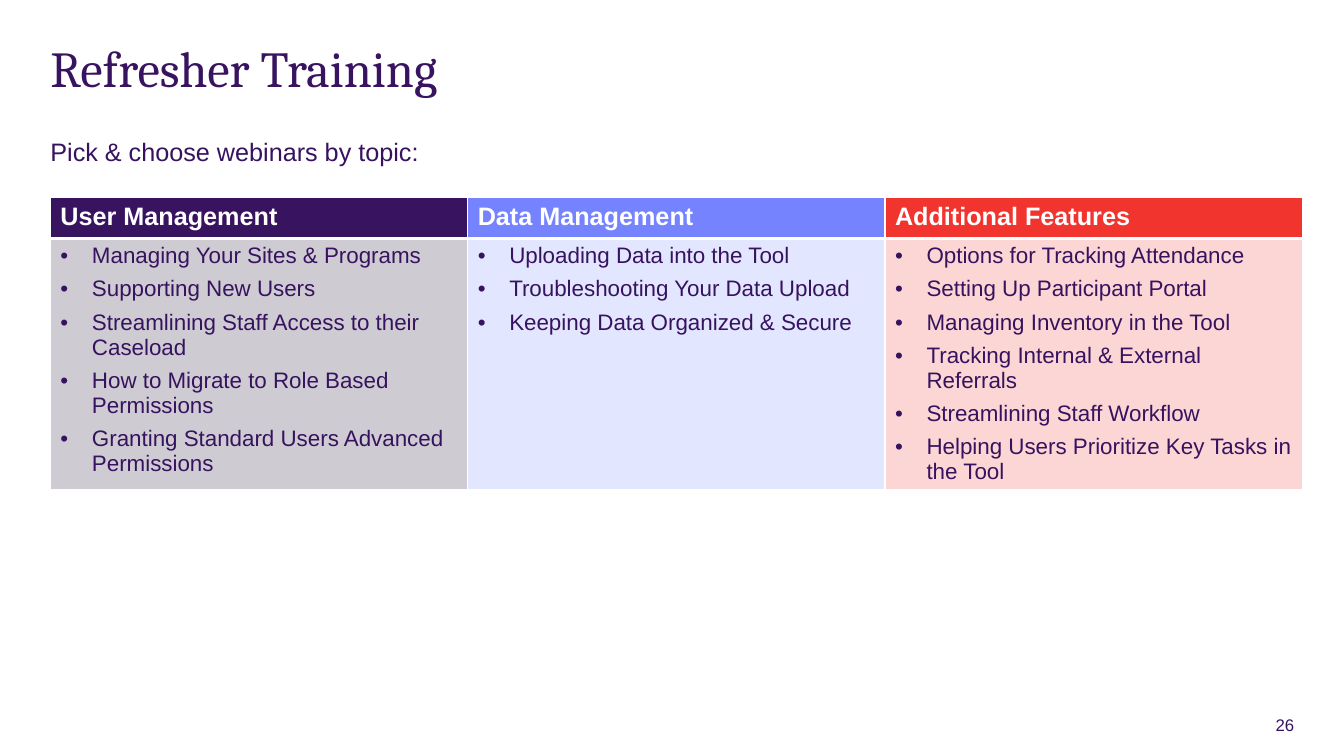
from lxml.etree import SubElement
from pptx import Presentation
from pptx.dml.color import RGBColor
from pptx.enum.text import MSO_ANCHOR as Anchor, MSO_AUTO_SIZE as AutoSize, PP_ALIGN as Align
from pptx.oxml.ns import qn
from pptx.util import Pt

INK = "37135F"
TOPICS = [
    ("User Management", "381360", "CECCD2", [
        "Managing Your Sites & Programs",
        "Supporting New Users",
        "Streamlining Staff Access to their Caseload",
        "How to Migrate to Role Based Permissions",
        "Granting Standard Users Advanced Permissions",
    ]),
    ("Data Management", "7583FF", "E3E6FF", [
        "Uploading Data into the Tool",
        "Troubleshooting Your Data Upload",
        "Keeping Data Organized & Secure",
    ]),
    ("Additional Features", "F2342F", "FCD6D5", [
        "Options for Tracking Attendance",
        "Setting Up Participant Portal",
        "Managing Inventory in the Tool",
        "Tracking Internal & External Referrals",
        "Streamlining Staff Workflow",
        "Helping Users Prioritize Key Tasks in the Tool",
    ]),
]


def rgb(value):
    return RGBColor.from_string(value)


class TrainingSlide:
    heading_font = "Cambria"
    body_font = "Arial"
    bullet_indent = 22.5

    def __init__(self, deck):
        self.slide = deck.slides.add_slide(deck.slide_layouts[5])

    def run(self, paragraph, text, size, color=INK, font=body_font, bold=False):
        run = paragraph.add_run()
        run.text = text
        run.font.size = Pt(size)
        run.font.name = font
        run.font.bold = bold
        run.font.color.rgb = rgb(color)

    def frame(self, shape, wrap=True):
        """Clear the margins of a text shape and align its text to the top."""
        frame = shape.text_frame
        frame.margin_left = frame.margin_right = 0
        frame.margin_top = frame.margin_bottom = 0
        frame.vertical_anchor = Anchor.TOP
        frame.auto_size = AutoSize.NONE
        frame.word_wrap = wrap
        return frame.paragraphs[0]

    def title(self, text, left, top, width, height):
        heading = self.slide.shapes.title
        heading.left, heading.top = Pt(left), Pt(top)
        heading.width, heading.height = Pt(width), Pt(height)
        paragraph = self.frame(heading)
        paragraph.alignment = Align.LEFT
        paragraph.line_spacing = 0.9
        self.run(paragraph, text, 36, "381360", self.heading_font)

    def text(self, text, left, top, width, height, size, align=Align.LEFT, wrap=True):
        box = self.slide.shapes.add_textbox(Pt(left), Pt(top), Pt(width), Pt(height))
        paragraph = self.frame(box, wrap)
        paragraph.alignment = align
        self.run(paragraph, text, size)

    def bullet(self, paragraph, text):
        properties = paragraph._p.get_or_add_pPr()
        properties.set("marL", str(Pt(self.bullet_indent)))
        properties.set("indent", str(-Pt(self.bullet_indent)))
        SubElement(properties, qn("a:buFont"), typeface=self.body_font)
        SubElement(properties, qn("a:buChar"), char="•")
        self.run(paragraph, text, 16)

    def paint(self, cell, fill, top=1, bottom=1):
        """Give a cell its white borders and its fill."""
        properties = cell._tc.get_or_add_tcPr()
        for side, width in (("L", 1), ("R", 1), ("T", top), ("B", bottom)):
            line = SubElement(properties, qn(f"a:ln{side}"), w=str(Pt(width)))
            SubElement(SubElement(line, qn("a:solidFill")), qn("a:srgbClr"), val="FFFFFF")
        cell.fill.solid()
        cell.fill.fore_color.rgb = rgb(fill)

    def topic_table(self, topics, left, top, column_width, row_heights):
        table = self.slide.shapes.add_table(
            len(row_heights), len(topics), Pt(left), Pt(top),
            Pt(column_width * len(topics)), Pt(sum(row_heights))).table
        table.horz_banding = False
        for row, height in zip(table.rows, row_heights):
            row.height = Pt(height)
        for column, (topic, dark, light, webinars) in enumerate(topics):
            table.columns[column].width = Pt(column_width)
            header, body = table.cell(0, column), table.cell(1, column)
            self.paint(header, dark, bottom=3)
            self.paint(body, light, top=3)
            self.run(header.text_frame.paragraphs[0], topic, 18, "FFFFFF", bold=True)
            for index, webinar in enumerate(webinars):
                if index:
                    paragraph = body.text_frame.add_paragraph()
                    paragraph.space_before = Pt(6)
                else:
                    paragraph = body.text_frame.paragraphs[0]
                self.bullet(paragraph, webinar)


def main():
    deck = Presentation()
    deck.slide_width, deck.slide_height = Pt(960), Pt(540)
    training = TrainingSlide(deck)
    training.title("Refresher Training", 36, 31.7, 888, 82.8)
    training.text("Pick & choose webinars by topic:", 36, 97.2, 888, 25.2, 18)
    training.topic_table(TOPICS, 36, 141.1, 298.08, [29.2, 178.8])
    training.text("26", 909.4, 510.5, 15.1, 14.4, 12, Align.RIGHT, wrap=False)
    deck.save("out.pptx")


if __name__ == "__main__":
    main()
